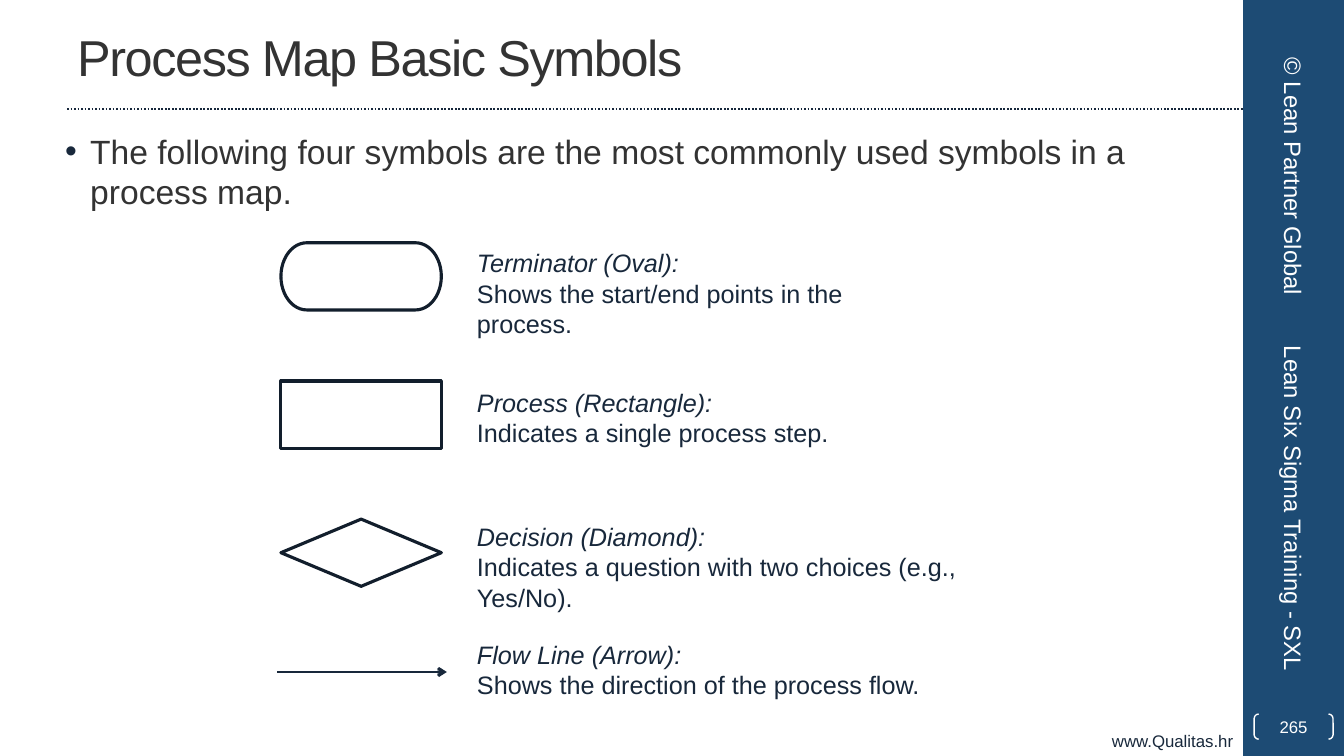
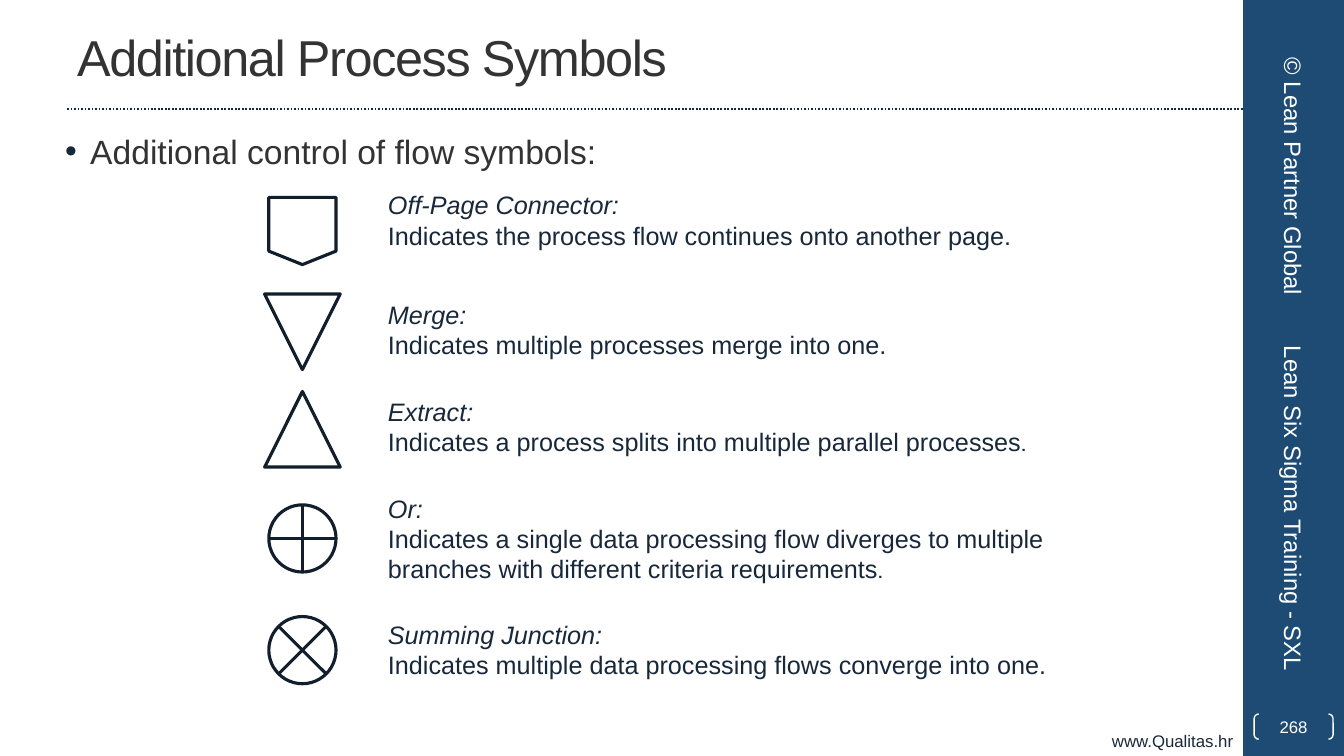
from lxml import etree
from pptx import Presentation, util as u
from pptx.dml.color import RGBColor
from pptx.enum import dml, shapes, text
from pptx.oxml import ns

BAND = RGBColor(0x1D, 0x4B, 0x74)
INK = RGBColor(0x18, 0x28, 0x3B)
OUTLINE = RGBColor(0x12, 0x1E, 0x2C)
RULE = RGBColor(0x17, 0x27, 0x3B)
CHARCOAL = RGBColor(0x33, 0x33, 0x33)
WHITE = RGBColor(0xFF, 0xFF, 0xFF)

FONT = "Arial"
STOP_FONT = "Cabin"
COLS, ROWS = 160, 90
BAND_COL = 148
MSO = shapes.MSO_SHAPE
MIDDLE = text.MSO_ANCHOR.MIDDLE
CENTER, RIGHT = text.PP_ALIGN.CENTER, text.PP_ALIGN.RIGHT


def add_xml(parent, tag, **attributes):
    return etree.SubElement(parent, ns.qn(tag), attributes)


class Deck:
    """Slides on a grid of COLS by ROWS square cells."""

    def __init__(self):
        self.prs = Presentation()
        self.prs.slide_width = u.Inches(13.33)
        self.prs.slide_height = u.Inches(7.5)
        self.s = None

    def x(self, cols):
        return round(self.prs.slide_width * cols / COLS)

    def y(self, rows):
        return round(self.prs.slide_height * rows / ROWS)

    def box(self, left, top, width, height):
        return self.x(left), self.y(top), self.x(width), self.y(height)

    def slide(self, title, body, number):
        self.s = self.prs.slides.add_slide(self.prs.slide_layouts[6])
        band = self.shape(MSO.RECTANGLE, BAND_COL, 0, COLS - BAND_COL, ROWS)
        band.fill.solid()
        band.fill.fore_color.rgb = BAND
        band.line.fill.background()
        self.text("www.Qualitas.hr", 0, 86.4, BAND_COL, 3.6, 12, align=RIGHT)
        rule = self.line(8, 13, BAND_COL, RULE, 1.25)
        rule.line.dash_style = dml.MSO_LINE.ROUND_DOT
        self.title(title)
        self.bullet(body)
        self.page_number(number)
        self.side_text("© Lean Partner Global", 21, 38, CENTER)
        self.side_text("Lean Six Sigma Training - SXL", 62, 44)

    def style(self, p, size, color=INK, align=None, italic=False):
        p.alignment = align
        p.font.name = FONT
        p.font.size = u.Pt(size)
        p.font.color.rgb = color
        p.font.italic = italic

    def text_box(self, *place):
        sp = self.s.shapes.add_textbox(*self.box(*place))
        sp.text_frame.word_wrap = True
        return sp

    def text(self, words, left, top, width, height, size, color=INK, align=None):
        sp = self.text_box(left, top, width, height)
        p = sp.text_frame.paragraphs[0]
        p.text = words
        self.style(p, size, color, align)
        return sp

    def title(self, words):
        sp = self.text(words, 8, 0.4, 133.3, 12.6, 36, CHARCOAL)
        sp.text_frame.vertical_anchor = MIDDLE
        r = sp.text_frame.paragraphs[0].runs[0]
        r._r.get_or_add_rPr().set("spc", "-100")

    def bullet(self, words):
        p = self.text_box(5, 15, 141.3, 72).text_frame.paragraphs[0]
        p.text = words
        ppr = p._p.get_or_add_pPr()
        ppr.set("marL", str(u.Inches(0.38)))
        ppr.set("indent", str(-u.Inches(0.25)))
        add_xml(add_xml(ppr, "a:buClr"), "a:srgbClr", val=str(INK))
        add_xml(ppr, "a:buFont", typeface=FONT)
        add_xml(ppr, "a:buChar", char="•")
        self.style(p, 24, CHARCOAL)

    def page_number(self, number):
        sp = self.shape(MSO.DOUBLE_BRACKET, 149.3, 85, 9.4, 3, WHITE, 1)
        sp.adjustments[0] = 0.18
        tf = sp.text_frame
        tf.margin_left = tf.margin_top = tf.margin_right = tf.margin_bottom = 0
        tf.vertical_anchor = MIDDLE
        p = tf.paragraphs[0]
        p.text = str(number)
        self.style(p, 12, WHITE, CENTER)

    def side_text(self, words, middle, length, align=None):
        """Text that runs down the band, centred on the row given."""
        height = 6.4
        left = (BAND_COL + COLS - length) / 2
        sp = self.text(words, left, middle - height / 2, length, height,
                       17, WHITE, align)
        sp.rotation = 90
        sp.text_frame.vertical_anchor = MIDDLE

    def shape(self, kind, left, top, width, height, color=OUTLINE, weight=2.25):
        sp = self.s.shapes.add_shape(kind, *self.box(left, top, width, height))
        sp.shadow.inherit = False
        sp.fill.background()
        sp.line.color.rgb = color
        sp.line.width = u.Pt(weight)
        return sp

    def symbol(self, kind, center, top, width, height):
        self.shape(kind, center - width / 2, top, width, height)

    def line(self, left, row, right, color, weight):
        c = self.s.shapes.add_connector(
            shapes.MSO_CONNECTOR.STRAIGHT,
            self.x(left), self.y(row), self.x(right), self.y(row))
        c.line.color.rgb = color
        c.line.width = u.Pt(weight)
        add_xml(c._element.spPr, "a:effectLst")
        return c

    def arrow(self, left, row, right):
        c = self.line(left, row, right, INK, 2)
        add_xml(c.line._get_or_add_ln(), "a:tailEnd", type="arrow")

    def label(self, name, meaning, left, top, width, lines=2, stop=""):
        """Name in italics over its meaning; stop is a full stop in STOP_FONT."""
        tf = self.text_box(left, top, width, 1.2 + 3.65 * lines).text_frame
        p = tf.paragraphs[0]
        p.text = name
        self.style(p, 18, italic=True)
        p = tf.add_paragraph()
        p.text = meaning
        self.style(p, 18)
        if stop:
            r = p.add_run()
            r.text = stop
            r.font.name = STOP_FONT


def basic_symbols(deck):
    deck.slide("Process Map Basic Symbols",
               "The following four symbols are the most commonly used symbols "
               "in a process map.", 265)
    kinds = (MSO.FLOWCHART_TERMINATOR, MSO.FLOWCHART_PROCESS,
             MSO.FLOWCHART_DECISION)
    for i, kind in enumerate(kinds):
        deck.symbol(kind, 43, 28.9 + 16.45 * i, 19.1, 8)
    deck.arrow(33, 80, 53.2)
    for name, meaning, top, width, lines in (
            ("Terminator (Oval):",
             "Shows the start/end points in the process.", 28.9, 56.9, 3),
            ("Process (Rectangle):",
             "Indicates a single process step.", 45.5, 56.9, 2),
            ("Decision (Diamond):",
             "Indicates a question with two choices (e.g., Yes/No).",
             61.5, 66.4, 3),
            ("Flow Line (Arrow):",
             "Shows the direction of the process flow.", 75.5, 56.9, 2)):
        deck.label(name, meaning, 55.6, top, width, lines)


def additional_symbols(deck):
    deck.slide("Additional Process Symbols",
               "Additional control of flow symbols:", 268)
    for kind, top, size in ((MSO.FLOWCHART_OFFPAGE_CONNECTOR, 23.5, 8),
                            (MSO.FLOWCHART_MERGE, 35, 9),
                            (MSO.FLOWCHART_EXTRACT, 46.6, 9),
                            (MSO.FLOWCHART_OR, 60.1, 8),
                            (MSO.FLOWCHART_SUMMING_JUNCTION, 73.4, 8)):
        deck.symbol(kind, 36, top, size, size)
    for name, meaning, top, lines, stop in (
            ("Off-Page Connector:",
             "Indicates the process flow continues onto another page.",
             22, 2, ""),
            ("Merge:",
             "Indicates multiple processes merge into one.", 35, 2, ""),
            ("Extract:",
             "Indicates a process splits into multiple parallel processes",
             46.6, 2, "."),
            ("Or:",
             "Indicates a single data processing flow diverges to multiple "
             "branches with different criteria requirements", 58.1, 3, "."),
            ("Summing Junction:",
             "Indicates multiple data processing flows converge into one.",
             73.1, 2, "")):
        deck.label(name, meaning, 45, top, 84.5, lines, stop)


def main():
    deck = Deck()
    basic_symbols(deck)
    additional_symbols(deck)
    deck.prs.save("out.pptx")


if __name__ == "__main__":
    main()
